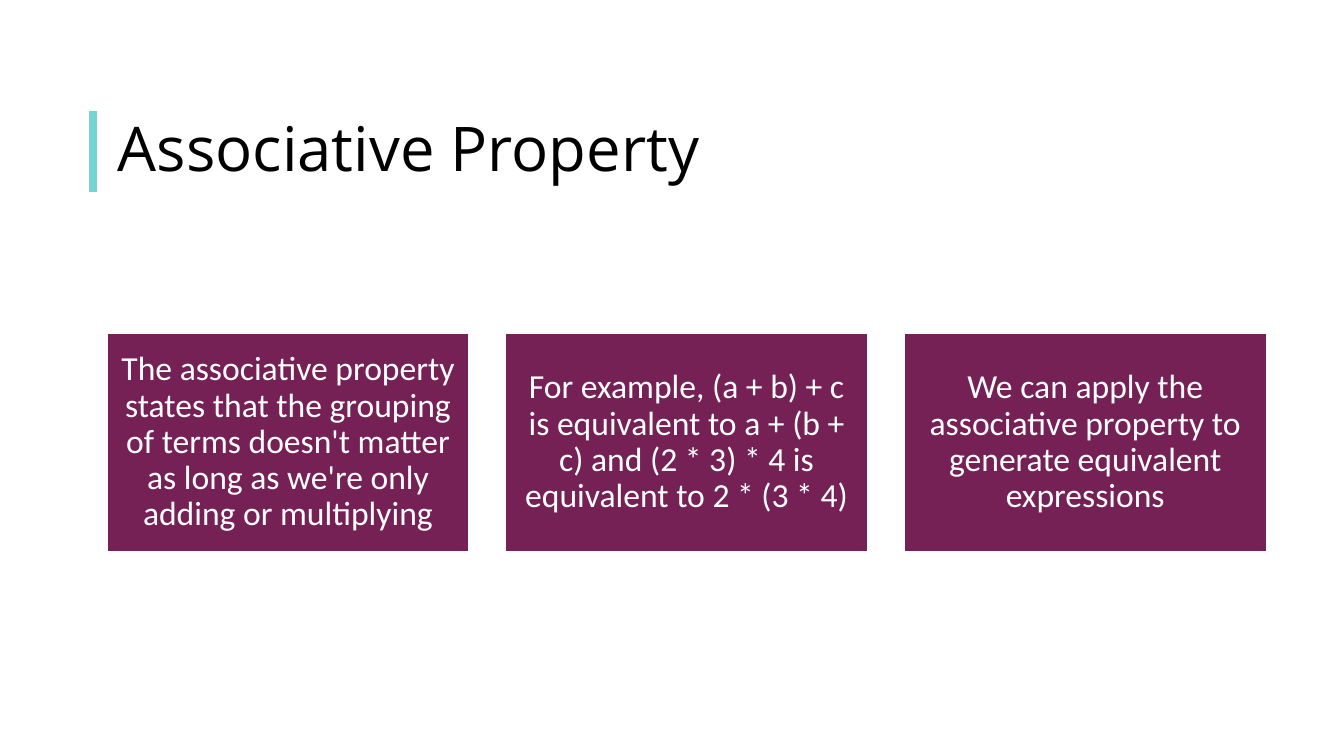
from pptx import Presentation
from pptx.dml.color import RGBColor
from pptx.enum.shapes import MSO_CONNECTOR as Link, MSO_SHAPE as Shape
from pptx.enum.text import MSO_ANCHOR as Anchor, MSO_AUTO_SIZE as Fit, PP_ALIGN as Align
from pptx.oxml.ns import qn
from pptx.util import Inches, Pt
from lxml import etree

BLACK = RGBColor(0x00, 0x00, 0x00)
WHITE = RGBColor(0xFF, 0xFF, 0xFF)
TEAL = RGBColor(0x76, 0xD5, 0xD4)
PLUM = RGBColor(0x75, 0x21, 0x56)

HEAD = {"name": "Open Sans", "size": Pt(44), "bold": False}
BODY = {"name": "Calibri", "size": Pt(24)}

TITLE = "Associative Property"
CARDS = [
    "The associative property states that the grouping of terms doesn't matter "
    "as long as we're only adding or multiplying",
    "For example, (a + b) + c is equivalent to a + (b + c) and "
    "(2 * 3) * 4 is equivalent to 2 * (3 * 4)",
    "We can apply the associative property to generate equivalent expressions",
]


def write(shape, text, font, color, align):
    frame = shape.text_frame
    frame.text = text
    layout = {"word_wrap": True, "auto_size": Fit.NONE, "vertical_anchor": Anchor.MIDDLE}
    for side in ("left", "right", "top", "bottom"):
        layout["margin_" + side] = Inches(0.1)
    for key, value in layout.items():
        setattr(frame, key, value)
    para = frame.paragraphs[0]
    para.alignment = align
    para.line_spacing = 0.9
    for key, value in font.items():
        setattr(para.font, key, value)
    para.font.color.rgb = color


def add_head(slide, left, top, width, height):
    # Accent bar
    x = Inches(left)
    bar = slide.shapes.add_connector(Link.STRAIGHT, x, Inches(top), x, Inches(top + height))
    bar.line.color.rgb = TEAL
    bar.line.width = Pt(6)
    etree.SubElement(bar._element.spPr, qn("a:effectLst"))

    # Title
    title = slide.shapes.title
    box = {"left": left + 0.15, "top": top, "width": width - 0.15, "height": height}
    for key, value in box.items():
        setattr(title, key, Inches(value))
    write(title, TITLE, HEAD, BLACK, Align.LEFT)


def add_cards(slide, left, top, width, height, gap):
    # Equal cards in one row
    wide = (width - gap * (len(CARDS) - 1)) / len(CARDS)
    for i, text in enumerate(CARDS):
        x = left + i * (wide + gap)
        card = slide.shapes.add_shape(
            Shape.RECTANGLE, Inches(x), Inches(top), Inches(wide), Inches(height))
        card.shadow.inherit = False
        card.fill.solid()
        card.fill.fore_color.rgb = PLUM
        card.line.color.rgb = WHITE
        card.line.width = Pt(1)
        write(card, text, BODY, WHITE, Align.CENTER)


def main():
    deck = Presentation()
    deck.slide_width = Inches(13.33)
    deck.slide_height = Inches(7.5)
    slide = deck.slides.add_slide(deck.slide_layouts[5])
    add_head(slide, 0.92, 1.1, 11.65, 0.8)
    add_cards(slide, 1.06, 3.31, 11.5, 2.16, 0.36)
    deck.save("out.pptx")


if __name__ == "__main__":
    main()
